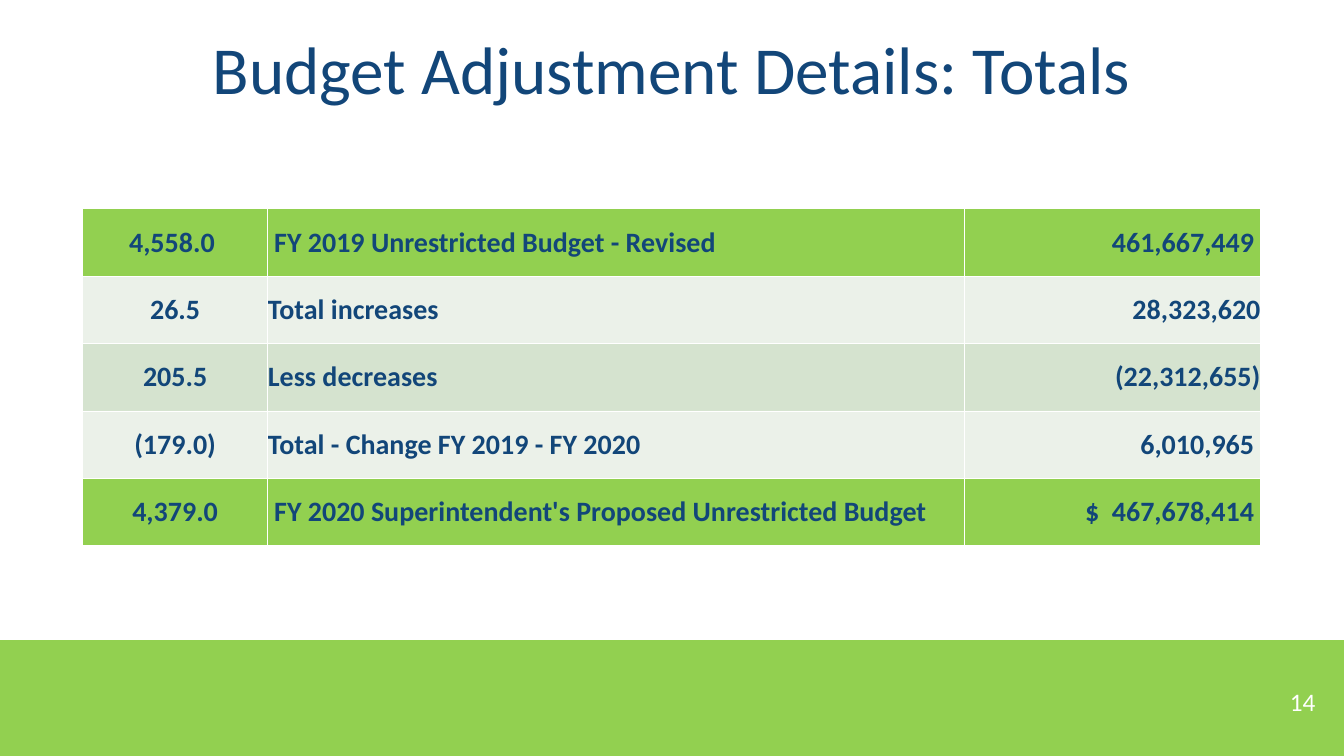
from dataclasses import dataclass

import pptx
import pptx.dml.color
import pptx.enum.shapes
import pptx.enum.text
import pptx.oxml
import pptx.oxml.ns
import pptx.util

Cm = pptx.util.Cm
Pt = pptx.util.Pt
Align = pptx.enum.text.PP_ALIGN
Anchor = pptx.enum.text.MSO_ANCHOR

FONT = "Calibri"
NAVY, GREEN, WHITE = "124679", "92D050", "FFFFFF"
PALE, SAGE = "EBF1E9", "D5E3CF"


@dataclass
class BudgetRow:
    positions: str
    label: str
    amount: str
    fill: str


@dataclass
class Label:
    text: str
    left: float
    top: float
    width: float
    height: float
    size: int
    color: str
    align: Align
    line_spacing: float = 1.0


ROWS = [
    BudgetRow("4,558.0 ", " FY 2019 Unrestricted Budget - Revised", "461,667,449 ", GREEN),
    BudgetRow("26.5", "Total increases", "28,323,620", PALE),
    BudgetRow("205.5", "Less decreases", "(22,312,655)", SAGE),
    BudgetRow("(179.0)", "Total - Change FY 2019 - FY 2020", "6,010,965 ", PALE),
    BudgetRow("4,379.0", " FY 2020 Superintendent's Proposed Unrestricted Budget",
              "$  467,678,414 ", GREEN),
]
COLUMN_WIDTHS = [4.67, 17.55, 7.47]
COLUMN_ALIGNS = [Align.CENTER, Align.LEFT, Align.RIGHT]
ROW_HEIGHT = 1.7

LABELS = [
    Label("Budget Adjustment Details: Totals", 2.33, 0, 29.21, 3.68, 48, NAVY, Align.CENTER, 0.9),
    Label("14", 25.78, 17.17, 7.62, 1.02, 18, WHITE, Align.RIGHT),
]


def rgb(value: str) -> pptx.dml.color.RGBColor:
    return pptx.dml.color.RGBColor.from_string(value)


def style_paragraph(para, size: int, color: str, align: Align, bold: bool = False) -> None:
    para.alignment = align
    para.font.name = FONT
    para.font.size = Pt(size)
    para.font.bold = bold
    para.font.color.rgb = rgb(color)


def add_label(page, label: Label) -> None:
    box = page.shapes.add_textbox(Cm(label.left), Cm(label.top), Cm(label.width), Cm(label.height))
    frame = box.text_frame
    frame.word_wrap = True
    frame.vertical_anchor = Anchor.MIDDLE
    frame.text = label.text
    para = frame.paragraphs[0]
    para.line_spacing = label.line_spacing
    style_paragraph(para, label.size, label.color, label.align)


def add_borders(cell) -> None:
    properties = cell._tc.get_or_add_tcPr()
    for position, side in enumerate(("lnL", "lnR", "lnT", "lnB")):
        line = pptx.oxml.parse_xml(
            f'<a:{side} {pptx.oxml.ns.nsdecls("a")} w="12700"><a:solidFill>'
            f'<a:srgbClr val="{WHITE}"/></a:solidFill></a:{side}>')
        properties.insert(position, line)


def fill_cell(cell, text: str, fill: str, align: Align) -> None:
    cell.margin_left = cell.margin_right = cell.margin_top = cell.margin_bottom = 0
    cell.vertical_anchor = Anchor.MIDDLE
    cell.fill.solid()
    cell.fill.fore_color.rgb = rgb(fill)
    cell.text = text
    style_paragraph(cell.text_frame.paragraphs[0], 20, NAVY, align, bold=True)
    add_borders(cell)


def add_budget_table(page) -> None:
    table = page.shapes.add_table(
        len(ROWS), len(COLUMN_WIDTHS), Cm(2.08), Cm(5.26),
        Cm(sum(COLUMN_WIDTHS)), Cm(ROW_HEIGHT * len(ROWS))).table
    table.first_row = table.horz_banding = False
    for column, width in zip(table.columns, COLUMN_WIDTHS):
        column.width = Cm(width)
    for table_row, entry in zip(table.rows, ROWS):
        table_row.height = Cm(ROW_HEIGHT)
        texts = (entry.positions, entry.label, entry.amount)
        for cell, text, align in zip(table_row.cells, texts, COLUMN_ALIGNS):
            fill_cell(cell, text, entry.fill, align)


def main() -> None:
    deck = pptx.Presentation()
    deck.slide_width, deck.slide_height = Cm(33.87), Cm(19.05)
    page = deck.slides.add_slide(deck.slide_layouts[6])

    # Footer band
    band_top = Cm(16.13)
    band = page.shapes.add_shape(
        pptx.enum.shapes.MSO_SHAPE.RECTANGLE, 0, band_top,
        deck.slide_width, deck.slide_height - band_top)
    band.shadow.inherit = False
    band.fill.solid()
    band.fill.fore_color.rgb = rgb(GREEN)
    band.line.fill.background()

    # Title and page number
    for label in LABELS:
        add_label(page, label)

    # Budget totals
    add_budget_table(page)

    deck.save("out.pptx")


if __name__ == "__main__":
    main()
